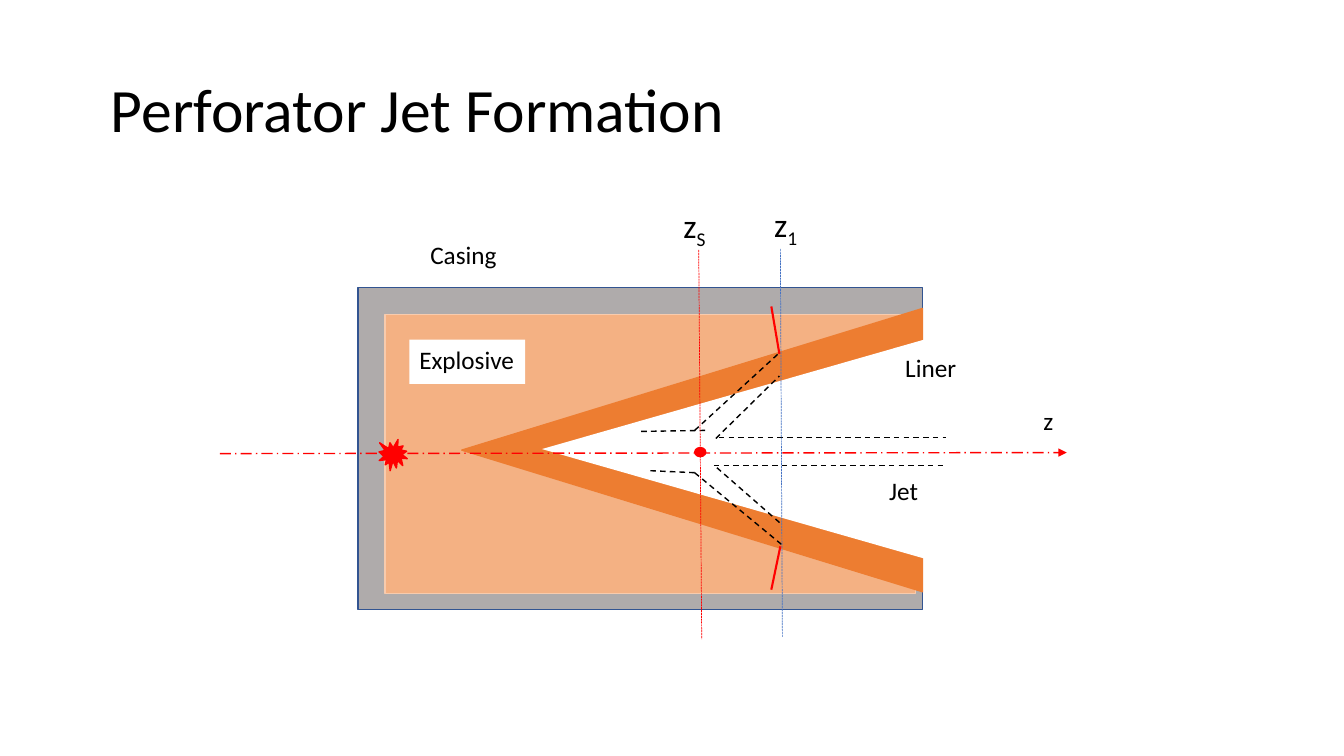
import dataclasses
from typing import Any, Optional

import pptx
import pptx.dml.color
import pptx.enum.dml
import pptx.enum.shapes
import pptx.enum.text
import pptx.oxml
import pptx.oxml.ns
import pptx.util

Inches = pptx.util.Inches
Pt = pptx.util.Pt
KIND = pptx.enum.shapes.MSO_SHAPE
DASH = pptx.enum.dml.MSO_LINE
ANCHOR = pptx.enum.text.MSO_ANCHOR
ALIGN = pptx.enum.text.PP_ALIGN

BLACK, WHITE, RED, BLUE = "000000", "FFFFFF", "FF0000", "4472C4"
LINER = "ED7D31"


@dataclasses.dataclass(frozen=True)
class Part:
    kind: Any
    box: tuple[float, float, float, float]
    fill: str
    outline: Optional[str] = None
    rotation: float = 0


@dataclasses.dataclass(frozen=True)
class Stroke:
    start: tuple[float, float]
    end: tuple[float, float]
    color: str = BLACK
    width: float = 1
    dash: Any = DASH.DASH
    arrow: bool = False


@dataclasses.dataclass(frozen=True)
class Label:
    words: str
    box: tuple[float, float, float, float]
    size: float = 18
    subscript: str = ""
    fill: Optional[str] = WHITE
    wrap: bool = True


CHARGE = [
    Part(KIND.RECTANGLE, (3.55, 2.85, 5.6, 3.2), "AFABAB", "325491"),
    Part(KIND.RECTANGLE, (3.82, 3.12, 5.26, 2.77), "F4B183", "F8CBAD"),
    Part(KIND.ISOSCELES_TRIANGLE, (5.46, 2.18, 2.81, 4.57), LINER, LINER, 270),
    Part(KIND.ISOSCELES_TRIANGLE, (6.24, 2.43, 2.32, 4.05), WHITE, None, 270),
]
AXIS_AND_JET = [
    Stroke((2.18, 4.5), (10.58, 4.49), RED, 1, DASH.LONG_DASH_DOT, True),
    Stroke((7.13, 4.34), (9.38, 4.34)),
    Stroke((6.89, 4.27), (7.73, 3.5)),
    Stroke((7.08, 4.62), (9.36, 4.62)),
    Stroke((6.36, 4.28), (7, 4.27)),
    Stroke((6.89, 4.69), (7.75, 5.4)),
    Stroke((7.74, 2.47), (7.76, 6.32), BLUE, 0.5, DASH.SQUARE_DOT),
    Stroke((7.1, 4.35), (7.73, 3.73)),
    Stroke((7.11, 4.64), (7.75, 5.2)),
    Stroke((6.45, 4.67), (6.9, 4.69)),
]
STAGNATION_POINT = Part(KIND.OVAL, (6.89, 4.44, 0.11, 0.09), RED, RED)
STAGNATION_PLANE = Stroke((6.93, 2.48), (6.96, 6.34), RED, 0.5, DASH.SQUARE_DOT)
LABELS = [
    Label("z", (7.58, 1.97, 0.45, 0.5), 24, "1", None, False),
    Label("z", (6.68, 1.98, 0.48, 0.5), 24, "S", None),
    Label("Casing", (4.17, 2.33, 0.86, 0.44)),
    Label("Explosive", (4.06, 3.37, 1.15, 0.44)),
    Label("Liner", (8.88, 3.45, 0.84, 0.49)),
    Label("Jet", (8.72, 4.67, 0.6, 0.44)),
    Label("z", (10.25, 3.97, 0.31, 0.44)),
]
DETONATION_FRONTS = [
    Stroke((7.65, 3.04), (7.73, 3.51), RED, 1.5, None),
    Stroke((7.74, 5.42), (7.65, 5.85), RED, 1.5, None),
]
DETONATOR = Part(KIND.EXPLOSION1, (3.76, 4.36, 0.28, 0.31), RED, RED)


def rgb(color: str) -> pptx.dml.color.RGBColor:
    return pptx.dml.color.RGBColor.from_string(color)


def apply(target: Any, values: dict[str, Any]) -> None:
    """Set each named attribute of target."""
    for name, value in values.items():
        setattr(target, name, value)


def add_run(paragraph: Any, words: str, size: float) -> Any:
    run = paragraph.add_run()
    apply(run, {"text": words})
    apply(run.font, {"name": "Calibri", "size": Pt(size)})
    run.font.color.rgb = rgb(BLACK)
    return run


def draw_part(slide: Any, part: Part) -> None:
    shape = slide.shapes.add_shape(part.kind, *map(Inches, part.box))
    shape.shadow.inherit = False
    shape.rotation = part.rotation
    shape.fill.solid()
    shape.fill.fore_color.rgb = rgb(part.fill)
    if part.outline:
        shape.line.color.rgb = rgb(part.outline)
        shape.line.width = Pt(1)
    else:
        shape.line.fill.background()


def draw_stroke(slide: Any, stroke: Stroke) -> None:
    connector = slide.shapes.add_connector(
        pptx.enum.shapes.MSO_CONNECTOR.STRAIGHT,
        *map(Inches, stroke.start + stroke.end))
    line = connector.line
    line.color.rgb = rgb(stroke.color)
    apply(line, {"width": Pt(stroke.width), "dash_style": stroke.dash})
    properties = connector._element.spPr
    if stroke.arrow:
        outline = properties.find(pptx.oxml.ns.qn("a:ln"))
        outline.append(pptx.oxml.parse_xml(
            f'<a:tailEnd {pptx.oxml.ns.nsdecls("a")} type="triangle"/>'))
    properties.append(pptx.oxml.parse_xml(
        f'<a:effectLst {pptx.oxml.ns.nsdecls("a")}/>'))


def draw_label(slide: Any, label: Label) -> None:
    box = slide.shapes.add_textbox(*map(Inches, label.box))
    if label.fill:
        box.fill.solid()
        box.fill.fore_color.rgb = rgb(label.fill)
    apply(box.text_frame, {"word_wrap": label.wrap,
                           "vertical_anchor": ANCHOR.TOP})
    paragraph = box.text_frame.paragraphs[0]
    add_run(paragraph, label.words, label.size)
    if label.subscript:
        subscript = add_run(paragraph, label.subscript, label.size)
        subscript._r.get_or_add_rPr().set("baseline", "-25000")


def draw_title(slide: Any, words: str) -> None:
    title = slide.shapes.title
    apply(title, dict(zip(("left", "top", "width", "height"),
                          map(Inches, (1, 0.39, 11.5, 1.45)))))
    apply(title.text_frame, {"word_wrap": True,
                             "vertical_anchor": ANCHOR.MIDDLE})
    paragraph = title.text_frame.paragraphs[0]
    apply(paragraph, {"alignment": ALIGN.LEFT, "line_spacing": 0.9})
    add_run(paragraph, words, 44)


def main() -> None:
    deck = pptx.Presentation()
    apply(deck, {"slide_width": Inches(13.33), "slide_height": Inches(7.5)})
    slide = deck.slides.add_slide(deck.slide_layouts.get_by_name("Title Only"))
    draw_title(slide, "Perforator Jet Formation")
    for part in CHARGE:
        draw_part(slide, part)
    for stroke in AXIS_AND_JET:
        draw_stroke(slide, stroke)
    draw_part(slide, STAGNATION_POINT)
    draw_stroke(slide, STAGNATION_PLANE)
    for label in LABELS:
        draw_label(slide, label)
    for stroke in DETONATION_FRONTS:
        draw_stroke(slide, stroke)
    draw_part(slide, DETONATOR)
    deck.save("out.pptx")


if __name__ == "__main__":
    main()
